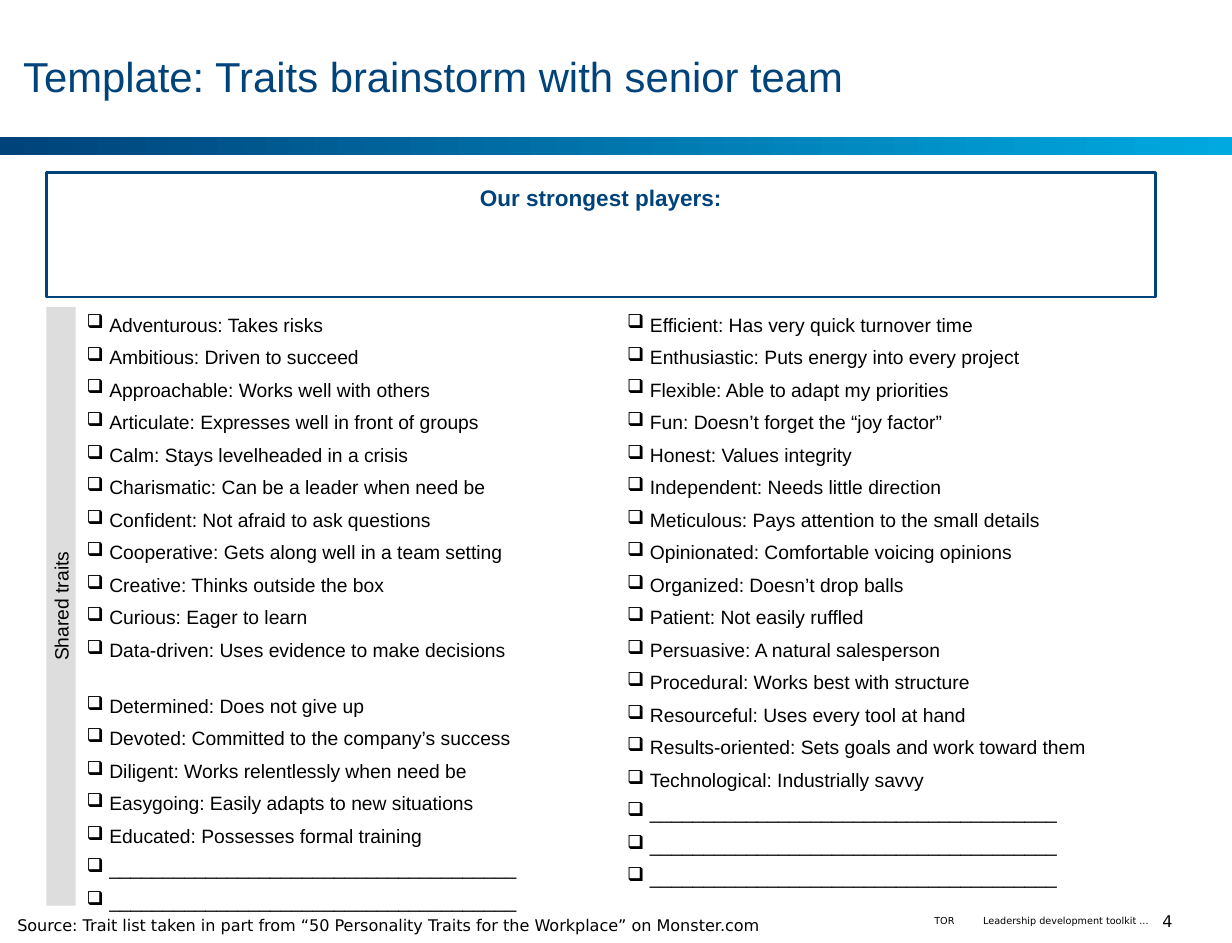
from lxml.etree import SubElement
from pptx import Presentation
from pptx.dml.color import RGBColor
from pptx.enum.shapes import MSO_SHAPE
from pptx.enum.text import MSO_ANCHOR, PP_ALIGN
from pptx.oxml.ns import qn
from pptx.util import Cm, Pt

COLORS = {
    "navy": "00437A",
    "sky": "00A9E0",
    "black": "000000",
    "page_number": "080808",
    "white": "FFFFFF",
    "gray": "DDDDDD",
}
BLANK_LINE = "_" * 38
LEFT_TRAITS = [
    "Adventurous: Takes risks",
    "Ambitious: Driven to succeed",
    "Approachable: Works well with others",
    "Articulate: Expresses well in front of groups",
    "Calm: Stays levelheaded in a crisis",
    "Charismatic: Can be a leader when need be",
    "Confident: Not afraid to ask questions",
    "Cooperative: Gets along well in a team setting",
    "Creative: Thinks outside the box",
    "Curious: Eager to learn",
    "Data-driven: Uses evidence to make decisions",
    "Determined: Does not give up",
    "Devoted: Committed to the company’s success",
    "Diligent: Works relentlessly when need be",
    "Easygoing: Easily adapts to new situations",
    "Educated: Possesses formal training",
] + [BLANK_LINE] * 2
RIGHT_TRAITS = [
    "Efficient: Has very quick turnover time",
    "Enthusiastic: Puts energy into every project",
    "Flexible: Able to adapt my priorities",
    "Fun: Doesn’t forget the “joy factor”",
    "Honest: Values integrity",
    "Independent: Needs little direction",
    "Meticulous: Pays attention to the small details",
    "Opinionated: Comfortable voicing opinions",
    "Organized: Doesn’t drop balls",
    "Patient: Not easily ruffled",
    "Persuasive: A natural salesperson",
    "Procedural: Works best with structure",
    "Resourceful: Uses every tool at hand",
    "Results-oriented: Sets goals and work toward them",
    "Technological: Industrially savvy",
] + [BLANK_LINE] * 3
GROUP_START = "Determined: Does not give up"


class TraitsPage:
    heading_font = "Arial"
    footer_font = "DejaVu Sans"

    def __init__(self, page):
        self.page = page

    def color(self, name):
        return RGBColor.from_string(COLORS[name])

    def style(self, para, size, font, color="black", bold=False, align=PP_ALIGN.LEFT):
        para.alignment = align
        para.font.size = Pt(size)
        para.font.name = font
        para.font.bold = bold
        para.font.color.rgb = self.color(color)

    def frame(self, box, anchor, insets, wrap=True):
        frame = box.text_frame
        frame.word_wrap = wrap
        frame.vertical_anchor = anchor
        (frame.margin_left, frame.margin_top,
         frame.margin_right, frame.margin_bottom) = [Cm(inset) for inset in insets]
        return frame

    def text(self, area, words, size, font, anchor=MSO_ANCHOR.MIDDLE,
             insets=(0, 0, 0, 0), wrap=True, **look):
        box = self.page.shapes.add_textbox(*[Cm(length) for length in area])
        para = self.frame(box, anchor, insets, wrap).paragraphs[0]
        para.text = words
        self.style(para, size, font, **look)

    def footer(self, area, words, size=6, inset=0.13, **look):
        self.text(area, words, size, self.footer_font,
                  insets=(inset, 0, 0, 0), wrap=False, **look)

    def rectangle(self, area):
        box = self.page.shapes.add_shape(
            MSO_SHAPE.RECTANGLE, *[Cm(length) for length in area])
        box.shadow.inherit = False
        box.line.fill.background()
        return box

    def gradient_bar(self, area, colors):
        fill = self.rectangle(area).fill
        fill.gradient()
        fill.gradient_angle = 0
        for stop, name in zip(fill.gradient_stops, colors):
            stop.color.rgb = self.color(name)

    def panel(self, area, words, size, fill, anchor, insets,
              border=None, upward=False, **look):
        box = self.rectangle(area)
        box.fill.solid()
        box.fill.fore_color.rgb = self.color(fill)
        if border:
            box.line.color.rgb = self.color(border)
            box.line.width = Pt(1.5)
        frame = self.frame(box, anchor, insets)
        if upward:
            box.element.txBody.bodyPr.set("vert", "vert270")
        para = frame.paragraphs[0]
        para.text = words
        self.style(para, size, self.heading_font, align=PP_ALIGN.CENTER, **look)

    def checklist(self, area, traits):
        box = self.page.shapes.add_textbox(*[Cm(length) for length in area])
        frame = self.frame(box, MSO_ANCHOR.TOP, (0.25, 0.13, 0.25, 0.13))
        for index, trait in enumerate(traits):
            para = frame.add_paragraph() if index else frame.paragraphs[0]
            para.text = trait
            properties = para._p.get_or_add_pPr()
            properties.set("marL", str(Cm(0.5)))
            properties.set("indent", str(-Cm(0.5)))
            SubElement(properties, qn("a:buChar")).set("char", "❑")
            if index:
                para.space_before = Pt(20.4 if trait == GROUP_START else 5.8)
            self.style(para, 12, self.heading_font)


def main():
    deck = Presentation()
    deck.slide_width, deck.slide_height = Cm(27.03), Cm(20.68)
    traits_page = TraitsPage(deck.slides.add_slide(deck.slide_layouts[6]))

    traits_page.gradient_bar((0, 3, 27.03, 0.41), ("navy", "sky"))
    traits_page.text((0.51, 0.41, 26.09, 2.51),
                     "Template: Traits brainstorm with senior team",
                     26, traits_page.heading_font, color="navy")
    traits_page.panel((1.02, 3.78, 24.33, 2.74), "Our strongest players:", 14,
                      "white", MSO_ANCHOR.TOP, (0.13, 0.26, 0.13, 0.13),
                      border="navy", color="navy", bold=True)
    traits_page.panel((1.02, 6.73, 0.64, 13.13), "Shared traits", 12,
                      "gray", MSO_ANCHOR.MIDDLE, (0.13, 0.13, 0.13, 0.13), upward=True)
    for left, traits in ((1.65, LEFT_TRAITS), (13.51, RIGHT_TRAITS)):
        traits_page.checklist((left, 6.73, 11.23, 13.13), traits)

    traits_page.text((0.38, 20.07, 19.33, 0.43),
                     "Source: Trait list taken in part from “50 Personality Traits "
                     "for the Workplace” on Monster.com",
                     10, traits_page.footer_font, anchor=MSO_ANCHOR.BOTTOM)
    traits_page.footer((20.37, 20.07, 0.58, 0.25), "TOR")
    traits_page.footer((21.39, 20.07, 3.81, 0.25),
                       "Leadership development toolkit ...", align=PP_ALIGN.RIGHT)
    traits_page.footer((25.17, 20.07, 0.89, 0.25), "4", size=10, inset=0,
                       color="page_number", align=PP_ALIGN.CENTER)
    deck.save("out.pptx")


if __name__ == "__main__":
    main()
